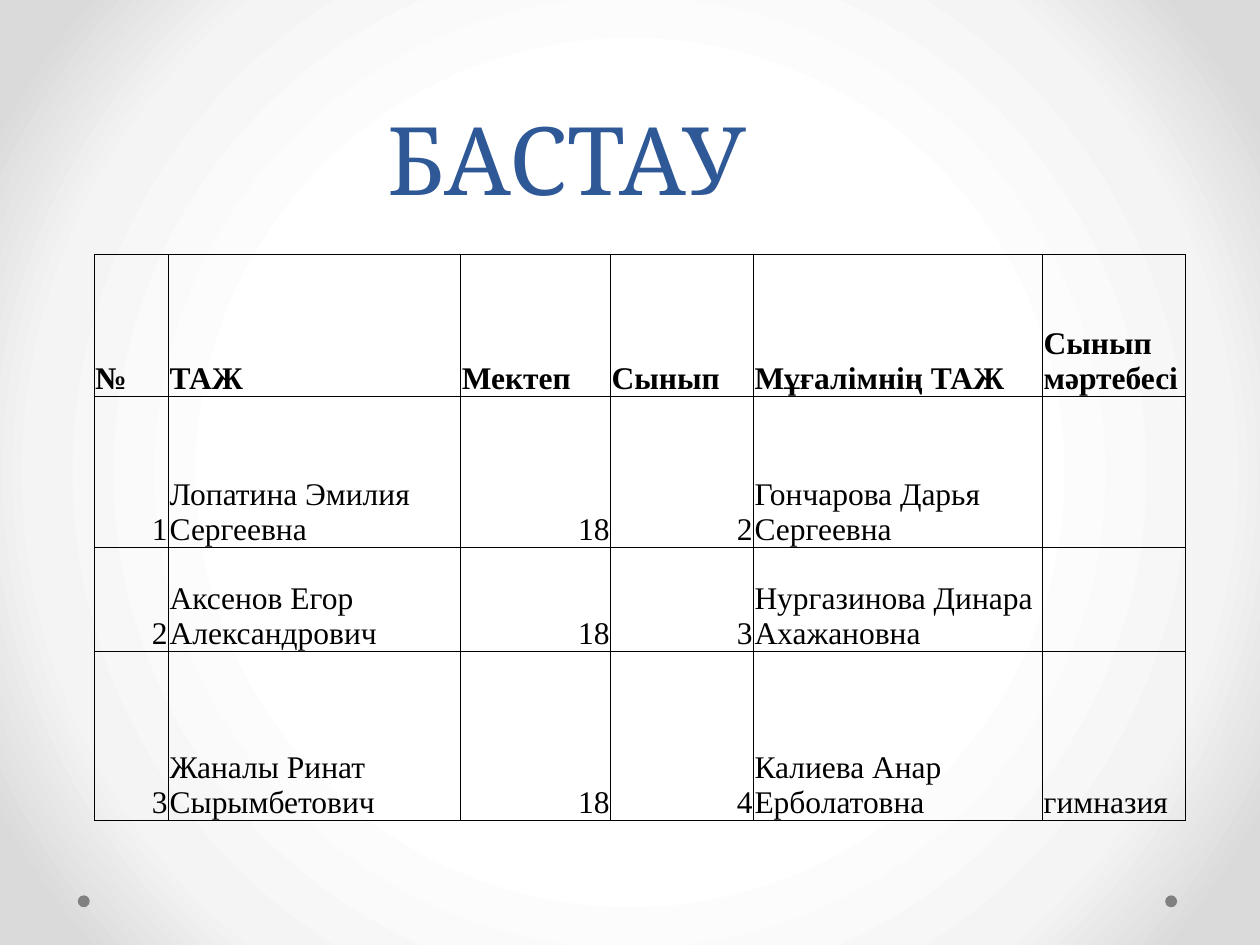
from dataclasses import dataclass

from lxml.etree import SubElement
from pptx import Presentation
from pptx.dml.color import RGBColor
from pptx.enum.shapes import MSO_SHAPE
from pptx.enum.text import MSO_ANCHOR, PP_ALIGN
from pptx.oxml.ns import qn
from pptx.util import Cm, Pt


@dataclass(frozen=True)
class Theme:
    title_color: str = "2F5897"
    ink: str = "000000"
    dot: str = "808080"
    glow: tuple = ((50, "FFFFFF"), (76, "F4F4F4"), (92, "DADADA"))
    title_font: str = "Cambria"
    table_font: str = "Times New Roman"
    title_size: int = 54
    title_leading: int = 58
    table_size: int = 18
    border: float = 0.5


THEME = Theme()
COLUMN_WIDTHS = (1.5, 5.89, 3.02, 2.88, 5.83, 2.88)
ROW_HEIGHTS = (2.86, 3.04, 2.1, 3.4)
PUPILS = (
    ("№", "ТАЖ", "Мектеп", "Сынып", "Мұғалімнің ТАЖ", "Сынып мәртебесі"),
    ("1", "Лопатина Эмилия Сергеевна", "18", "2", "Гончарова Дарья Сергеевна", ""),
    ("2", "Аксенов Егор Александрович", "18", "3", "Нургазинова Динара Ахажановна", ""),
    ("3", "Жаналы Ринат Сырымбетович", "18", "4", "Калиева Анар Ерболатовна", "гимназия"),
)


def style_font(paragraph, name, size, color, bold=False):
    for run in paragraph.runs:
        run.font.name = name
        run.font.size = Pt(size)
        run.font.bold = bold
        run.font.color.rgb = RGBColor.from_string(color)


def paint_background(slide):
    fill = slide.background.fill
    fill.gradient()
    gradient = slide.element.find(".//" + qn("a:gradFill"))
    for child in list(gradient):
        gradient.remove(child)
    stops = SubElement(gradient, qn("a:gsLst"))
    for percent, color in THEME.glow:
        stop = SubElement(stops, qn("a:gs"), pos=str(percent * 1000))
        SubElement(stop, qn("a:srgbClr"), val=color)
    circle = SubElement(gradient, qn("a:path"), path="circle")
    SubElement(circle, qn("a:fillToRect"), l="50000", t="50000", r="50000", b="50000")


def add_corner_dots(slide, left, top, width, height):
    for dot_left in (left + width - height, left):
        dot = slide.shapes.add_shape(
            MSO_SHAPE.OVAL, Cm(dot_left), Cm(top), Cm(height), Cm(height))
        dot.shadow.inherit = False
        dot.fill.solid()
        dot.fill.fore_color.rgb = RGBColor.from_string(THEME.dot)
        dot.line.fill.background()


def add_title(slide, left, top, width, height):
    title = slide.shapes.add_textbox(Cm(left), Cm(top), Cm(width), Cm(height)).text_frame
    title.word_wrap = True
    title.vertical_anchor = MSO_ANCHOR.BOTTOM
    title.text = "БАСТАУ"
    heading = title.paragraphs[0]
    heading.alignment = PP_ALIGN.CENTER
    heading.line_spacing = Pt(THEME.title_leading)
    style_font(heading, THEME.title_font, THEME.title_size, THEME.title_color)


def outline_cell(cell):
    properties = cell._tc.get_or_add_tcPr()
    for side in ("a:lnL", "a:lnR", "a:lnT", "a:lnB"):
        border = SubElement(properties, qn(side), w=str(Pt(THEME.border)))
        paint = SubElement(border, qn("a:solidFill"))
        SubElement(paint, qn("a:srgbClr"), val=THEME.ink)


def fill_cell(cell, text, is_header):
    outline_cell(cell)
    cell.fill.background()
    cell.vertical_anchor = MSO_ANCHOR.BOTTOM
    cell.margin_left = cell.margin_right = cell.margin_top = Cm(0.02)
    cell.margin_bottom = 0
    cell.text_frame.text = text
    entry = cell.text_frame.paragraphs[0]
    entry.alignment = PP_ALIGN.RIGHT if text.isdigit() else PP_ALIGN.LEFT
    style_font(entry, THEME.table_font, THEME.table_size, THEME.ink, is_header)


def add_pupil_table(slide, left, top, width, height):
    pupils = slide.shapes.add_table(
        len(ROW_HEIGHTS), len(COLUMN_WIDTHS),
        Cm(left), Cm(top), Cm(width), Cm(height)).table
    pupils.first_row = False
    pupils.horz_banding = False
    for column, column_width in zip(pupils.columns, COLUMN_WIDTHS):
        column.width = Cm(column_width)
    for row, row_height in zip(pupils.rows, ROW_HEIGHTS):
        row.height = Cm(row_height)
    for row_index, entries in enumerate(PUPILS):
        for column_index, text in enumerate(entries):
            fill_cell(pupils.cell(row_index, column_index), text, row_index == 0)


def main():
    deck = Presentation()
    deck.slide_width, deck.slide_height = Cm(25.4), Cm(19.05)
    slide = deck.slides.add_slide(deck.slide_layouts[6])
    paint_background(slide)
    add_corner_dots(slide, 1.57, 18.05, 22.16, 0.24)
    add_pupil_table(slide, 1.9, 5.13, sum(COLUMN_WIDTHS), sum(ROW_HEIGHTS))
    add_title(slide, 0, 0, 22.86, 4.45)
    deck.save("out.pptx")


if __name__ == "__main__":
    main()
